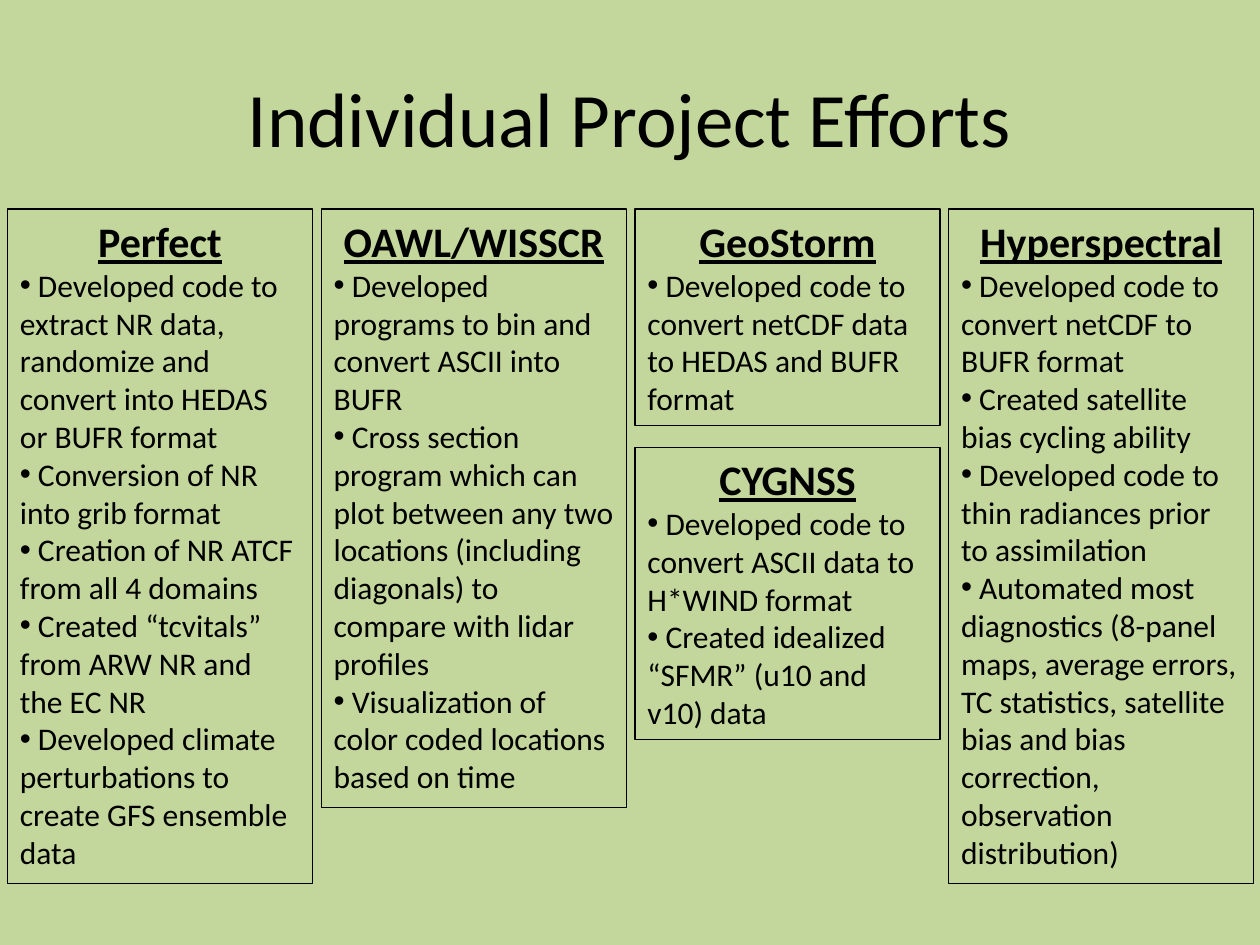
from lxml import etree
from pptx import Presentation
from pptx import util as u
from pptx.dml.color import RGBColor
from pptx.enum import shapes, text
from pptx.oxml import ns

COLORS = {"background": "C3D69B", "ink": "000000"}
FONT = "Calibri"
WIDTH, HEIGHT = 10, 7.5
GRID_LEFT, GRID_TOP = 0.06, 1.66
COLUMN_STEP, COLUMN_WIDTH = 2.49, 2.42

# column, offset below the grid top, height, heading, efforts
PROJECTS = [
    (0, 0, 5.35, "Perfect", [
        "Developed code to extract NR data, randomize and convert into HEDAS or BUFR format",
        "Conversion of NR into grib format",
        "Creation of NR ATCF from all 4 domains",
        "Created “tcvitals” from ARW NR and the EC NR",
        "Developed climate perturbations to create GFS ensemble data",
    ]),
    (1, 0, 4.75, "OAWL/WISSCR", [
        "Developed programs to bin and convert ASCII into BUFR",
        "Cross section program which can plot between any two locations "
        "(including diagonals) to compare with lidar profiles",
        "Visualization of color coded locations based on time",
    ]),
    (2, 0, 1.72, "GeoStorm", [
        "Developed code to convert netCDF data to HEDAS and BUFR format",
    ]),
    (2, 1.89, 2.32, "CYGNSS", [
        "Developed code to convert ASCII data to H*WIND format",
        "Created idealized “SFMR” (u10 and v10) data",
    ]),
    (3, 0, 5.35, "Hyperspectral", [
        "Developed code to convert netCDF to BUFR format",
        "Created satellite bias cycling ability",
        "Developed code to thin radiances prior to assimilation",
        "Automated most diagnostics (8-panel maps, average errors, TC statistics, "
        "satellite bias and bias correction, observation distribution)",
    ]),
]


class SlideBuilder:
    """Holds the style and the slide being built."""

    def __init__(self, presentation):
        self.slide = presentation.slides.add_slide(presentation.slide_layouts[5])
        fill = self.slide.background.fill
        fill.solid()
        fill.fore_color.rgb = self.color("background")

    def color(self, name):
        return RGBColor.from_string(COLORS[name])

    def run(self, paragraph, words, size, strong=False):
        run = paragraph.add_run()
        run.text = words
        font = run.font
        font.name, font.size = FONT, u.Pt(size)
        font.bold = font.underline = strong
        font.color.rgb = self.color("ink")

    def title(self, words):
        title = self.slide.shapes.title
        title.left, title.top = u.Inches(0.05 * WIDTH), u.Inches(0.04 * HEIGHT)
        title.width, title.height = u.Inches(0.9 * WIDTH), u.Inches(HEIGHT / 6)
        title.text_frame.vertical_anchor = text.MSO_ANCHOR.MIDDLE
        paragraph = title.text_frame.paragraphs[0]
        paragraph.alignment = text.PP_ALIGN.CENTER
        self.run(paragraph, words, 44)

    def bullet(self, frame, words):
        paragraph = frame.add_paragraph()
        paragraph.alignment = text.PP_ALIGN.LEFT
        properties = paragraph._p.get_or_add_pPr()
        etree.SubElement(properties, ns.qn("a:buFont"), typeface="Arial")
        etree.SubElement(properties, ns.qn("a:buChar"), char="•")
        self.run(paragraph, " " + words, 18)

    def project(self, column, offset, height, heading, efforts):
        """Draw an outlined box with an underlined heading and bullets."""
        box = self.slide.shapes.add_shape(
            shapes.MSO_SHAPE.RECTANGLE,
            u.Inches(GRID_LEFT + column * COLUMN_STEP), u.Inches(GRID_TOP + offset),
            u.Inches(COLUMN_WIDTH), u.Inches(height))
        box.shadow.inherit = False
        box.fill.background()
        box.line.color.rgb = self.color("ink")
        box.line.width = u.Pt(0.75)
        frame = box.text_frame
        frame.word_wrap = True
        frame.auto_size = text.MSO_AUTO_SIZE.SHAPE_TO_FIT_TEXT
        frame.vertical_anchor = text.MSO_ANCHOR.TOP
        frame.paragraphs[0].alignment = text.PP_ALIGN.CENTER
        self.run(frame.paragraphs[0], heading, 24, strong=True)
        for effort in efforts:
            self.bullet(frame, effort)


def main():
    presentation = Presentation()
    presentation.slide_width = u.Inches(WIDTH)
    presentation.slide_height = u.Inches(HEIGHT)
    builder = SlideBuilder(presentation)
    builder.title("Individual Project Efforts")
    for project in PROJECTS:
        builder.project(*project)
    presentation.save("out.pptx")


if __name__ == "__main__":
    main()
